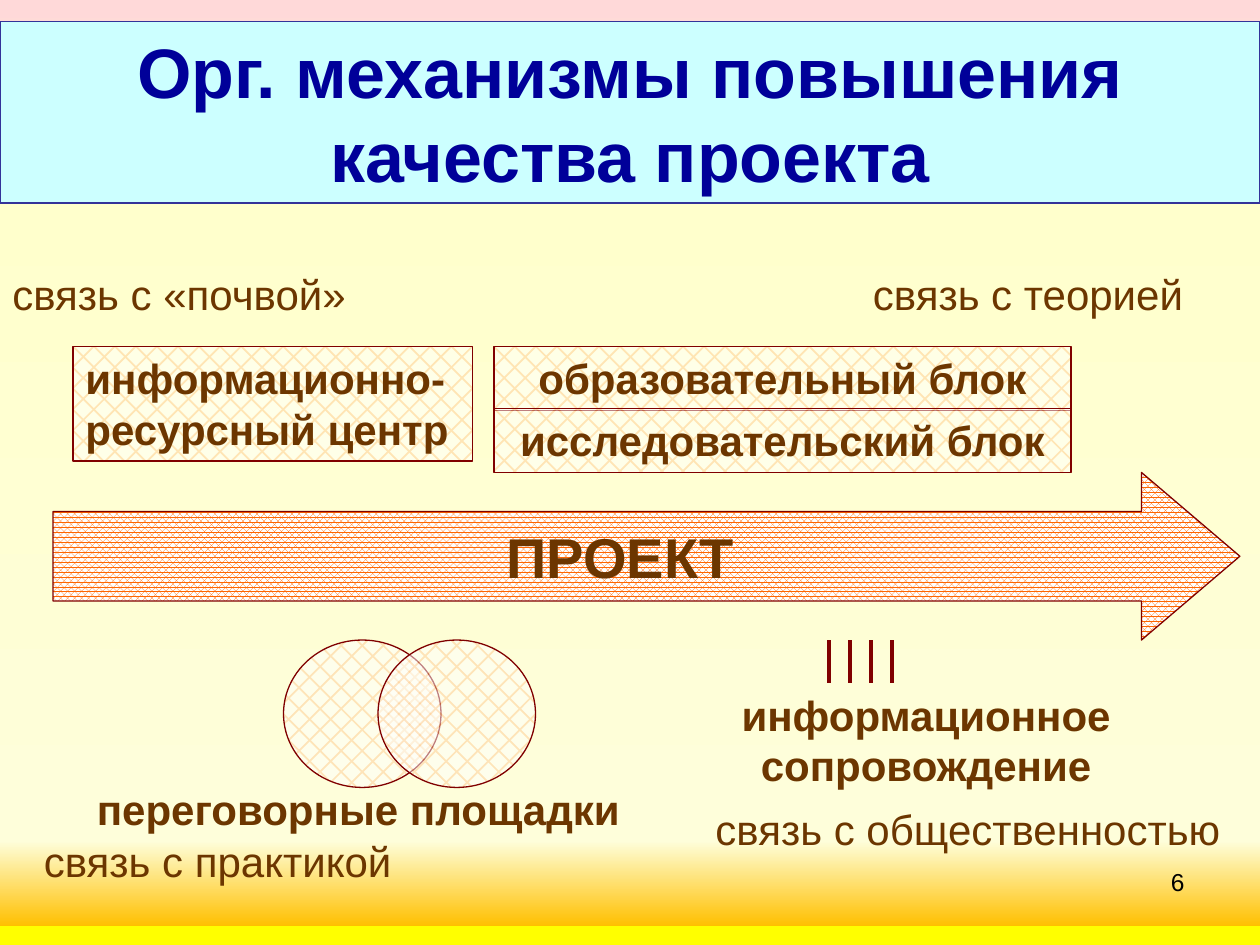
from lxml import etree
from pptx import Presentation
from pptx.dml.color import RGBColor
from pptx.enum import dml, shapes, text
from pptx.oxml.ns import qn
from pptx.util import Inches, Pt

COLORS = {
    "title": "000099", "title_fill": "CCFFFF", "title_line": "333399",
    "text": "6C3600", "line": "800000", "number": "000000",
    "brick": "FFCC99", "arrow": "FF6600", "white": "FFFFFF",
}
BACKGROUND = [(1, "FFD9D9"), (18, "FFFFCC"), (89, "FEFEDA"),
              (98, "FFC000"), (98, "FFFF00")]

TITLE = "Орг. механизмы повышения качества проекта"
LEFT, CENTER, RIGHT = text.PP_ALIGN.LEFT, text.PP_ALIGN.CENTER, text.PP_ALIGN.RIGHT

# Content: words, (left, top, width, height), alignment
BLOCKS = [
    ("информационно-ресурсный центр", (0.58, 2.75, 3.17, 0.91), LEFT),
    ("образовательный блок", (3.92, 2.75, 4.58, 0.51), CENTER),
    ("исследовательский блок", (3.92, 3.24, 4.58, 0.51), CENTER),
]
# Content: words, (left, top, width, height), bold, wrap, alignment
LABELS = [
    ("переговорные площадки", (0.67, 6.17, 4.36, 0.5), True, False, LEFT),
    ("информационное сопровождение", (5.17, 5.42, 4.36, 0.9), True, True, CENTER),
    ("связь с теорией", (6.83, 2.08, 2.67, 0.5), False, False, LEFT),
    ("связь с практикой", (0.25, 6.58, 2.96, 0.5), False, False, LEFT),
    ("связь с общественностью", (5.58, 6.33, 4.22, 0.5), False, False, LEFT),
    ("связь с «почвой»", (0, 2.08, 2.86, 0.5), False, False, LEFT),
]


def color(name):
    return RGBColor.from_string(COLORS[name])


def place(shape, area):
    shape.left, shape.top, shape.width, shape.height = map(Inches, area)


def write(shape, words, size=24, ink="text", bold=True, align=CENTER,
          wrap=True, anchor=text.MSO_ANCHOR.TOP, grow=True):
    frame = shape.text_frame
    frame.text = words
    frame.word_wrap = wrap
    frame.vertical_anchor = anchor
    frame.auto_size = (text.MSO_AUTO_SIZE.SHAPE_TO_FIT_TEXT if grow
                       else text.MSO_AUTO_SIZE.NONE)
    para = frame.paragraphs[0]
    para.alignment = align
    font = para.runs[0].font
    font.name, font.size, font.bold = "Arial", Pt(size), bold
    font.color.rgb = color(ink)


def add_patterned(kind, area, pattern, ink, opacity=100):
    shape = page.shapes.add_shape(kind, *map(Inches, area))
    shape.shadow.inherit = False
    shape.fill.patterned()
    shape.fill.pattern = pattern
    shape.fill.fore_color.rgb = color(ink)
    shape.fill.back_color.rgb = color("white")
    if opacity < 100:
        for tint in shape._element.spPr.iter(qn("a:srgbClr")):
            etree.SubElement(tint, qn("a:alpha"), val=str(opacity * 1000))
    shape.line.color.rgb = color("line")
    shape.line.width = Pt(0.75)
    return shape


def add_brick(kind, area):
    return add_patterned(kind, area, dml.MSO_PATTERN.DIAGONAL_BRICK, "brick", 50)


def add_label(words, area, **style):
    box = page.shapes.add_textbox(*map(Inches, area))
    write(box, words, **style)


deck = Presentation()
deck.slide_width, deck.slide_height = Inches(10), Inches(7.5)
page = deck.slides.add_slide(deck.slide_layouts[5])

# Background gradient, top to bottom
backdrop = page.background.fill
backdrop.gradient()
gradient = next(page._element.iter(qn("a:gradFill")))
for child in list(gradient):
    gradient.remove(child)
stops = etree.SubElement(gradient, qn("a:gsLst"))
for position, tint in BACKGROUND:
    stop = etree.SubElement(stops, qn("a:gs"), pos=str(position * 1000))
    etree.SubElement(stop, qn("a:srgbClr"), val=tint)
etree.SubElement(gradient, qn("a:lin"), ang="5400000", scaled="0")

# Slide number and title
add_label("6", (7.17, 6.83, 2.33, 0.52), size=14, ink="number",
          bold=False, align=RIGHT, grow=False)
title = page.shapes.title
place(title, (0, 0.17, 10, 1.44))
title.fill.solid()
title.fill.fore_color.rgb = color("title_fill")
title.line.color.rgb = color("title_line")
title.line.width = Pt(0.75)
write(title, TITLE, size=40, ink="title", anchor=text.MSO_ANCHOR.MIDDLE)

# Blocks above the arrow
for words, area, align in BLOCKS:
    write(add_brick(shapes.MSO_SHAPE.RECTANGLE, area), words, align=align)

# Project arrow
arrow = add_patterned(shapes.MSO_SHAPE.RIGHT_ARROW, (0.42, 3.75, 9.42, 1.33),
                      dml.MSO_PATTERN.PERCENT_75, "arrow")
arrow.adjustments[0], arrow.adjustments[1] = 0.534, 0.587
write(arrow, "ПРОЕКТ", size=32, wrap=False,
      anchor=text.MSO_ANCHOR.MIDDLE, grow=False)

# Overlapping circles
for left in (2.25, 3):
    add_brick(shapes.MSO_SHAPE.OVAL, (left, 5.08, 1.25, 1.17))

# Row of short strokes
for index in range(4):
    x = Inches(6.58 + index / 6)
    stroke = page.shapes.add_connector(shapes.MSO_CONNECTOR.STRAIGHT,
                                       x, Inches(5.08), x, Inches(5.42))
    stroke.line.color.rgb = color("line")
    stroke.line.width = Pt(2.75)
    etree.SubElement(stroke._element.spPr, qn("a:effectLst"))

# Captions
for words, area, bold, wrap, align in LABELS:
    add_label(words, area, bold=bold, wrap=wrap, align=align)

deck.save("out.pptx")
